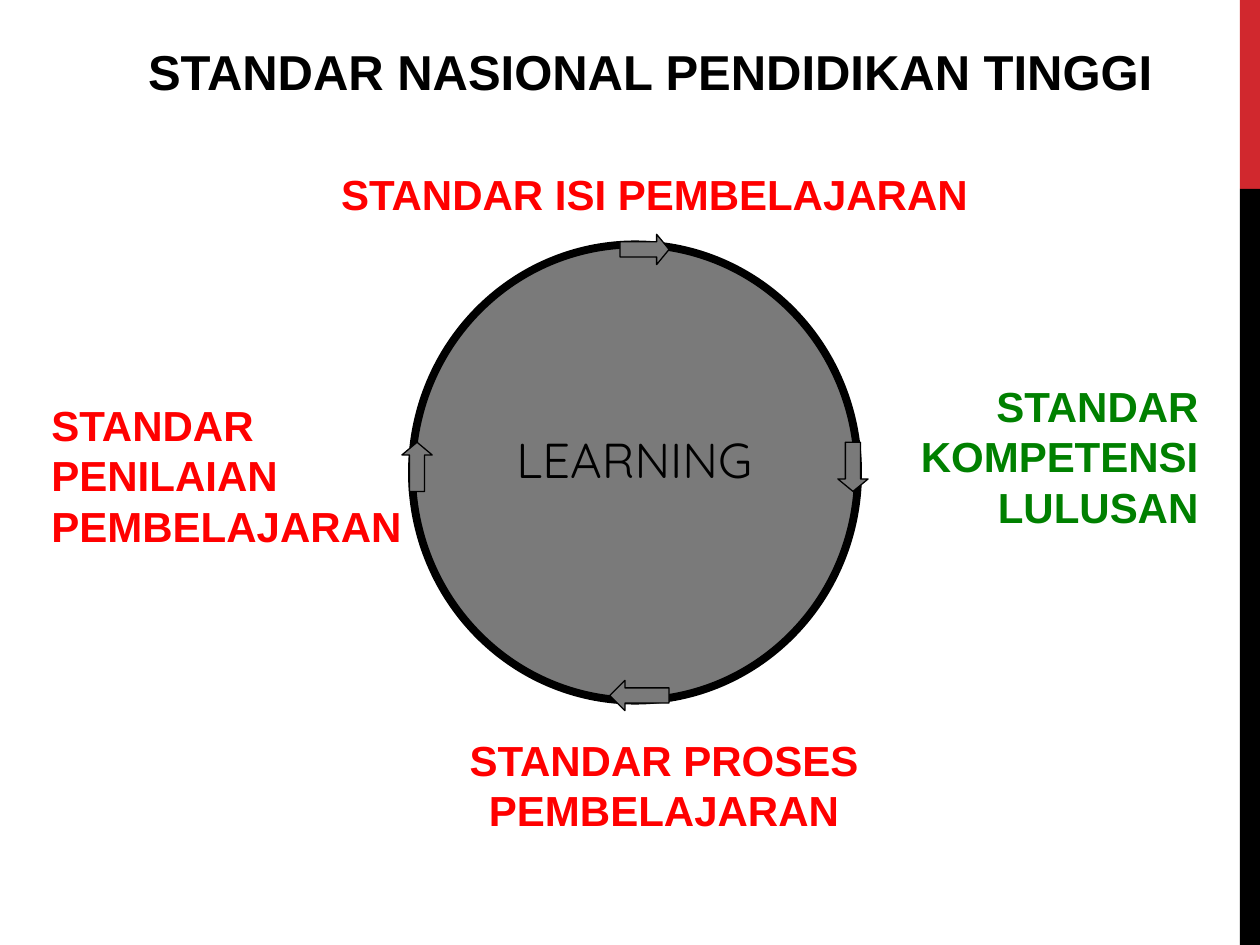
import pptx
import pptx.util
from pptx.dml.color import RGBColor
from pptx.enum.shapes import MSO_SHAPE
from pptx.enum.text import MSO_ANCHOR, MSO_AUTO_SIZE, PP_ALIGN
from pptx.util import Inches

COLORS = {"red": "FF0000", "green": "008000", "black": "000000",
          "gray": "7A7A7A", "accent": "D1282E"}

TITLE = ("STANDAR NASIONAL PENDIDIKAN TINGGI", (0.83, 0.28, 8.66, 0.57))
CENTER_LABEL = ("LEARNING", (4.0, 3.36, 2.57, 0.57))

# paragraphs, box, alignment, color
STANDARDS = [
    (["STANDAR ISI PEMBELAJARAN"], (2.11, 1.29, 6.17, 0.51), PP_ALIGN.CENTER, "red"),
    (["STANDAR KOMPETENSI LULUSAN"], (6.89, 2.97, 2.72, 1.31), PP_ALIGN.RIGHT, "green"),
    (["STANDAR PROSES PEMBELAJARAN"], (3.2, 5.78, 4.14, 0.91), PP_ALIGN.CENTER, "red"),
    (["STANDAR PENILAIAN", "PEMBELAJARAN"], (0.31, 3.12, 3.12, 1.31), PP_ALIGN.LEFT, "red"),
]

SIDEBAR = [((9.84, 0, 0.16, 1.5), "accent"), ((9.84, 1.5, 0.16, 6), "black")]
CYCLE = (3.27, 1.94, 3.54, 3.62)

# preset, box, head length
ARROWS = [
    (MSO_SHAPE.DOWN_ARROW, (6.65, 3.51, 0.24, 0.39), 0.41),
    (MSO_SHAPE.UP_ARROW, (3.19, 3.51, 0.24, 0.39), 0.42),
    (MSO_SHAPE.RIGHT_ARROW, (4.92, 1.86, 0.39, 0.24), 0.41),
    (MSO_SHAPE.LEFT_ARROW, (4.84, 5.4, 0.47, 0.24), 0.5),
]


def color(name):
    return RGBColor.from_string(COLORS[name])


def add_filled_shape(slide, preset, box, fill, line_width=0):
    shape = slide.shapes.add_shape(preset, *map(Inches, box))
    shape.shadow.inherit = False
    shape.fill.solid()
    shape.fill.fore_color.rgb = color(fill)
    if line_width:
        shape.line.color.rgb = color("black")
        shape.line.width = pptx.util.Pt(line_width)
    else:
        shape.line.fill.background()
    return shape


def write_text(shape, lines, alignment, font_name, size, color_name, bold):
    frame = shape.text_frame
    frame.text = "\n".join(lines)
    frame.word_wrap = True
    frame.auto_size = MSO_AUTO_SIZE.NONE
    frame.vertical_anchor = MSO_ANCHOR.TOP
    for paragraph in frame.paragraphs:
        paragraph.alignment = alignment
        paragraph.font.name = font_name
        paragraph.font.size = pptx.util.Pt(size)
        paragraph.font.bold = bold
        paragraph.font.color.rgb = color(color_name)


def main():
    presentation = pptx.Presentation()
    presentation.slide_width = Inches(10)
    presentation.slide_height = Inches(7.5)
    slide = presentation.slides.add_slide(presentation.slide_layouts.get_by_name("Title Only"))

    for box, fill in SIDEBAR:
        add_filled_shape(slide, MSO_SHAPE.RECTANGLE, box, fill)
    add_filled_shape(slide, MSO_SHAPE.OVAL, CYCLE, "gray", 4.5)

    text, box = CENTER_LABEL
    label = slide.shapes.add_textbox(*map(Inches, box))
    write_text(label, [text], PP_ALIGN.LEFT, "Quicksand", 28, "black", False)

    for lines, box, alignment, color_name in STANDARDS:
        label = slide.shapes.add_textbox(*map(Inches, box))
        write_text(label, lines, alignment, "Arial", 24, color_name, True)

    for preset, box, head_length in ARROWS:
        arrow = add_filled_shape(slide, preset, box, "gray", 0.75)
        arrow.adjustments[0] = 0.5
        arrow.adjustments[1] = head_length

    text, box = TITLE
    title = slide.shapes.title
    title.left, title.top, title.width, title.height = map(Inches, box)
    write_text(title, [text], PP_ALIGN.CENTER, "Arial", 28, "black", True)

    presentation.save("out.pptx")


if __name__ == "__main__":
    main()
